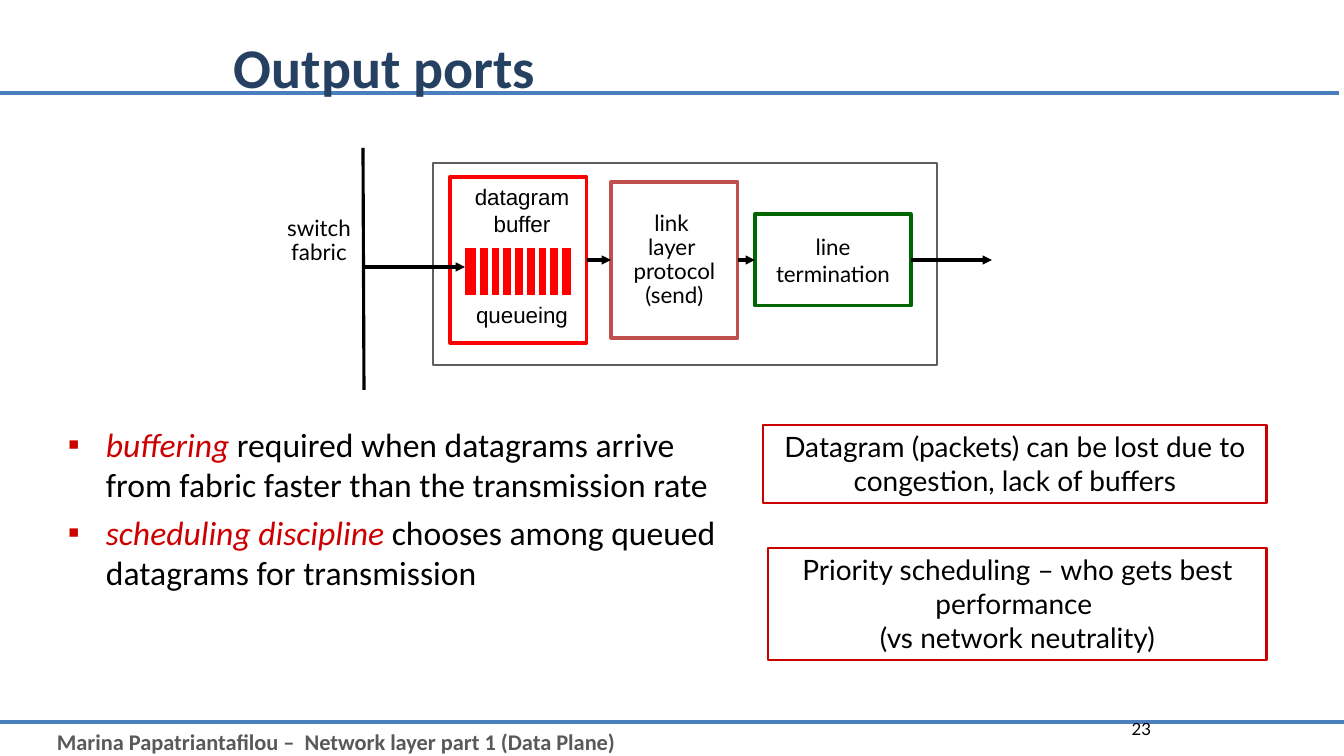
from lxml import etree
from pptx import Presentation
from pptx import util as u
from pptx.dml.color import RGBColor
from pptx.enum import shapes, text
from pptx.oxml.ns import qn

EMU_PER_PX = 914400 / 100.8
BLACK, WHITE, RED, DARK_RED, BLUE = "000000", "FFFFFF", "FF0000", "CC0000", "4B7EBC"
CENTER, LEFT, RIGHT = text.PP_ALIGN.CENTER, text.PP_ALIGN.LEFT, text.PP_ALIGN.RIGHT
MIDDLE, TOP = text.MSO_ANCHOR.MIDDLE, text.MSO_ANCHOR.TOP


def px(length):
    return u.Emu(round(length * EMU_PER_PX))


def color(hex_string):
    return RGBColor.from_string(hex_string)


def style_run(run, size, font="Lato", ink=BLACK, bold=False, italic=False):
    run.font.size, run.font.name = u.Pt(size), font
    run.font.bold, run.font.italic = bold, italic
    run.font.color.rgb = color(ink)


def write(shape, lines, size, align=CENTER, anchor=MIDDLE, wrap=True, spacing=None, **style):
    frame = shape.text_frame
    frame.text = "\n".join(lines)
    frame.word_wrap, frame.vertical_anchor = wrap, anchor
    for paragraph in frame.paragraphs:
        paragraph.alignment = align
        if spacing:
            paragraph.line_spacing = spacing
        for run in paragraph.runs:
            style_run(run, size, **style)


def add_text(slide, box, lines, size, **options):
    shape = slide.shapes.add_textbox(*map(px, box))
    write(shape, lines, size, **options)
    return shape


def add_box(slide, box, outline, width=2.25, fill=WHITE):
    shape = slide.shapes.add_shape(shapes.MSO_SHAPE.RECTANGLE, *map(px, box))
    shape.shadow.inherit = False
    shape.fill.solid()
    shape.fill.fore_color.rgb = color(fill)
    shape.line.color.rgb = color(outline)
    shape.line.width = u.Pt(width)
    return shape


def add_line(slide, start, end, ink=BLACK, width=2.25, arrow=False):
    line = slide.shapes.add_connector(
        shapes.MSO_CONNECTOR.STRAIGHT, *map(px, (*start, *end)))
    line.line.color.rgb = color(ink)
    line.line.width = u.Pt(width)
    properties = line._element.spPr
    if arrow:
        etree.SubElement(properties.find(qn("a:ln")), qn("a:tailEnd"), type="triangle")
    etree.SubElement(properties, qn("a:effectLst"))
    return line


def add_frame(slide, width, height):
    """Title, rules, footer and slide number."""
    footer_y = height - 34
    add_line(slide, (0, footer_y), (width, footer_y), BLUE)
    add_text(slide, (47, footer_y + 1, 1244, 37),
             ["Marina Papatriantafilou –  Network layer part 1 (Data Plane)"], 16,
             align=LEFT, anchor=TOP, font="Calibri", ink="595959", bold=True)
    add_line(slide, (0, 93), (width - 5, 93), BLUE)
    add_text(slide, (224, 28, 857, 76), ["Output ports"], 40,
             align=LEFT, font="Calibri", ink="254061", bold=True)
    add_text(slide, (1100, footer_y - 8, 61, 30), ["23"], 12, align=RIGHT)


def add_buffer(slide, left, top, width, height):
    """Datagram buffer with its queue; returns the outer box."""
    buffer = add_box(slide, (left, top, width, height), RED)
    label = add_text(slide, (left + 14, top + 1, 116, 160),
                     ["datagram", "buffer", "queueing"], 16,
                     anchor=TOP, wrap=False, font="Arial")
    label.text_frame.paragraphs[2].space_before = u.Pt(46)
    queue_top, queue_height = top + 69, 51
    add_box(slide, (left + 13, queue_top, 110, queue_height), WHITE, 3, fill=RED)
    for index in range(8):
        x = left + 28 + round(index * 82 / 7)
        add_line(slide, (x, queue_top + 1), (x, queue_top + queue_height - 1), WHITE, 3)
    return buffer


def add_port_diagram(slide, left, top):
    """Path from the switch fabric through the output port."""
    middle = top + 112
    add_box(slide, (left + 145, top + 15, 504, 202), "5F5F5F", 1.5)
    buffer = add_buffer(slide, left + 162, middle - 83, 137, 166)
    link = add_box(slide, (left + 323, middle - 78, 127, 156), "C0504D")
    write(link, ["link ", "layer ", "protocol", "(send)"], 16, wrap=False, spacing=0.9)
    termination = add_box(slide, (left + 467, middle - 46, 156, 92), "006600")
    write(termination, ["line", "termination"], 16, wrap=False)

    for source, target in ((buffer, link), (link, termination)):
        arrow = add_line(slide, (0, 0), (1, 1), arrow=True)
        arrow.begin_connect(source, 3)
        arrow.end_connect(target, 1)
    output = add_line(slide, (left + 623, middle), (left + 704, middle), arrow=True)
    output.begin_connect(termination, 3)

    add_text(slide, (left - 27, top + 47, 116, 92), ["switch", "fabric"], 16,
             wrap=False, spacing=0.9)
    add_line(slide, (left + 75, top), (left + 76, top + 242))
    add_line(slide, (left + 75, top + 119), (left + 177, top + 119), arrow=True)


def add_bullets(slide, box, items):
    shape = add_text(slide, box, [""] * len(items), 24, align=LEFT, anchor=TOP)
    for paragraph, (term, rest) in zip(shape.text_frame.paragraphs, items):
        paragraph.space_before = u.Pt(5)
        for words, ink, italic in ((term, DARK_RED, True), (rest, BLACK, False)):
            run = paragraph.add_run()
            run.text = words
            style_run(run, 24, "Calibri", ink, italic=italic)
        properties = paragraph._p.get_or_add_pPr()
        properties.set("marL", str(px(38)))
        properties.set("indent", str(-px(38)))
        bullet_color = etree.SubElement(properties, qn("a:buClr"))
        etree.SubElement(bullet_color, qn("a:srgbClr"), val=DARK_RED)
        etree.SubElement(properties, qn("a:buFont"), typeface="Arial")
        etree.SubElement(properties, qn("a:buChar"), char="▪")


def add_callout(slide, box, lines):
    write(add_box(slide, box, DARK_RED, 2), lines, 20, anchor=TOP)


def main():
    presentation = Presentation()
    width, height = 1344, 756
    presentation.slide_width, presentation.slide_height = px(width), px(height)
    slide = presentation.slides.add_slide(presentation.slide_layouts[6])
    add_frame(slide, width, height)
    add_port_diagram(slide, left=288, top=148)
    add_bullets(slide, (58, 419, 698, 194), [
        ("buffering",
         " required when datagrams arrive from fabric faster than the transmission rate"),
        ("scheduling discipline", " chooses among queued datagrams for transmission"),
    ])
    add_callout(slide, (763, 425, 504, 78),
                ["Datagram (packets) can be lost due to congestion, lack of buffers"])
    add_callout(slide, (768, 548, 499, 112),
                ["Priority scheduling – who gets best performance ", "(vs network neutrality)"])
    presentation.save("out.pptx")


if __name__ == "__main__":
    main()
